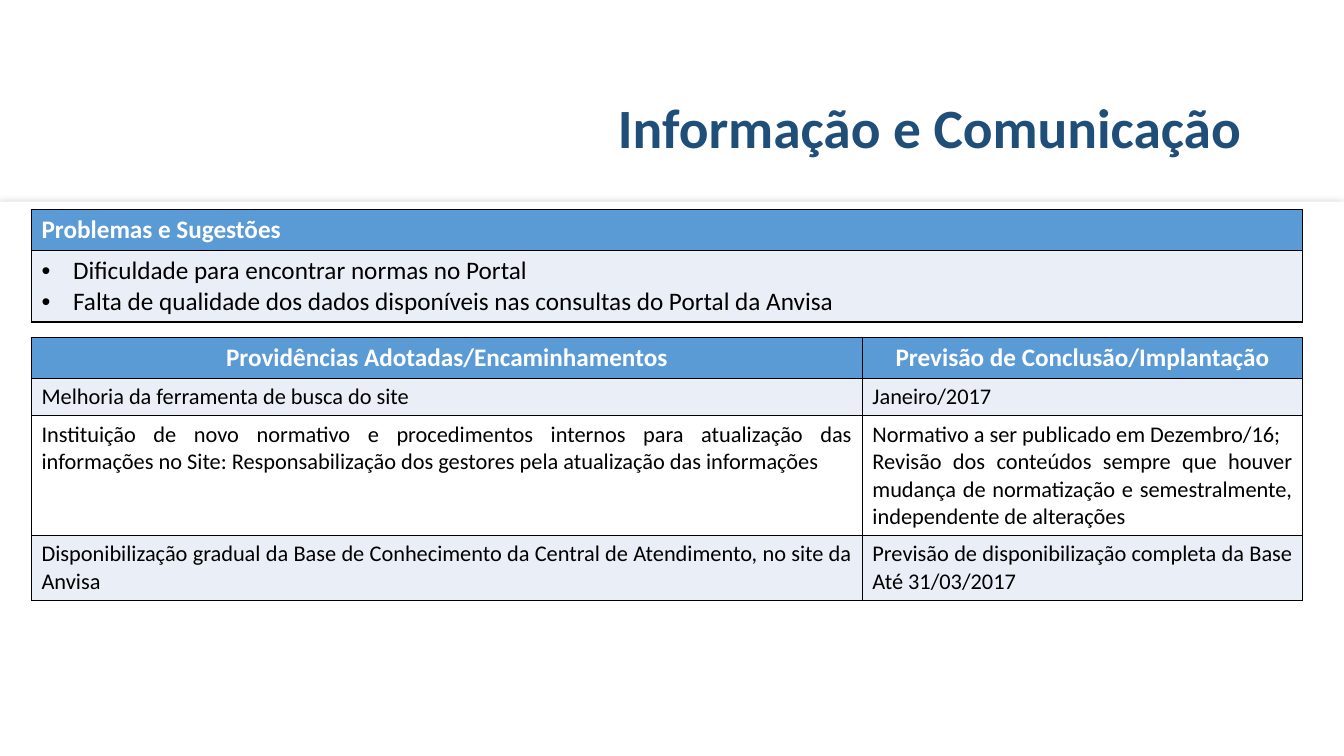
from lxml import etree
from pptx import Presentation
from pptx.dml.color import RGBColor
from pptx.enum.shapes import MSO_SHAPE
from pptx.enum.text import MSO_ANCHOR, PP_ALIGN
from pptx.oxml.ns import qn
from pptx.util import Pt

LEFT, CENTER, RIGHT, JUSTIFY = PP_ALIGN.LEFT, PP_ALIGN.CENTER, PP_ALIGN.RIGHT, PP_ALIGN.JUSTIFY
MIDDLE = MSO_ANCHOR.MIDDLE
RECTANGLE = MSO_SHAPE.RECTANGLE
TITLE_ONLY = 5

COLORS = {
    "title": "1F4E79",
    "header": "5B9BD5",
    "band": "EAEFF7",
    "white": "FFFFFF",
    "black": "000000",
    "shadow": "A6A6A6",
}


def rgb(name):
    return RGBColor.from_string(COLORS[name])


def add_color(parent, name):
    return etree.SubElement(parent, qn("a:srgbClr"), val=COLORS[name])


class SlideBuilder:
    font = "Calibri"

    def __init__(self, slide):
        self.slide = slide

    def format_paragraph(self, paragraph, size, color, bold, align):
        paragraph.alignment = align
        for run in paragraph.runs:
            run.font.name = self.font
            run.font.size = Pt(size)
            run.font.bold = bold
            run.font.color.rgb = rgb(color)

    def title(self, text, left, top, width, height):
        title = self.slide.shapes.title
        title.left, title.top, title.width, title.height = map(Pt, (left, top, width, height))
        frame = title.text_frame
        frame.text = text
        frame.word_wrap = True
        frame.vertical_anchor = MIDDLE
        frame.paragraphs[0].line_spacing = 0.9
        self.format_paragraph(frame.paragraphs[0], 39.6, "title", True, RIGHT)

    def panel(self, left, top, width, height):
        """Add the white content area with a soft shadow along its edge."""
        panel = self.slide.shapes.add_shape(RECTANGLE, *map(Pt, (left, top, width, height)))
        panel.fill.solid()
        panel.fill.fore_color.rgb = rgb("white")
        panel.line.fill.background()
        effects = etree.SubElement(panel._element.spPr, qn("a:effectLst"))
        shadow = etree.SubElement(effects, qn("a:outerShdw"), blurRad=str(Pt(5)), dist="0", dir="0")
        etree.SubElement(add_color(shadow, "shadow"), qn("a:alpha"), val="42000")

    def cell_borders(self, cell):
        properties = cell._tc.get_or_add_tcPr()
        for index, side in enumerate(("lnL", "lnR", "lnT", "lnB")):
            line = etree.Element(qn(f"a:{side}"), w=str(Pt(1)))
            add_color(etree.SubElement(line, qn("a:solidFill")), "black")
            properties.insert(index, line)

    def bullet(self, paragraph):
        properties = paragraph._p.get_or_add_pPr()
        properties.set("marL", str(Pt(22.5)))
        properties.set("indent", str(Pt(-22.5)))
        etree.SubElement(properties, qn("a:buFont"), typeface="Arial")
        etree.SubElement(properties, qn("a:buChar"), char="•")

    def table(self, rows, left, top, widths, heights, header_align, body_align, body_size,
              bulleted=False):
        """Add a table with a blue header row and alternating body bands."""
        frame = self.slide.shapes.add_table(
            len(rows), len(widths), *map(Pt, (left, top, sum(widths), sum(heights))))
        table = frame.table
        for column, width in zip(table.columns, widths):
            column.width = Pt(width)
        for row_index, (texts, height) in enumerate(zip(rows, heights)):
            table.rows[row_index].height = Pt(height)
            is_header = row_index == 0
            body_fill = "band" if row_index % 2 else "white"
            for cell, text in zip(table.rows[row_index].cells, texts):
                cell.fill.solid()
                cell.fill.fore_color.rgb = rgb("header" if is_header else body_fill)
                self.cell_borders(cell)
                cell.text_frame.text = text
                for paragraph in cell.text_frame.paragraphs:
                    if is_header:
                        self.format_paragraph(paragraph, 18, "white", True, header_align)
                        continue
                    if bulleted:
                        self.bullet(paragraph)
                    self.format_paragraph(paragraph, body_size, "black", False, body_align)


PROBLEMS = [
    ["Problemas e Sugestões"],
    ["Dificuldade para encontrar normas no Portal\n"
     "Falta de qualidade dos dados disponíveis nas consultas do Portal da Anvisa"],
]
ACTIONS = [
    ["Providências Adotadas/Encaminhamentos", "Previsão de Conclusão/Implantação"],
    ["Melhoria da ferramenta de busca do site", "Janeiro/2017"],
    ["Instituição de novo normativo e procedimentos internos para atualização das informações "
     "no Site: Responsabilização dos gestores pela atualização das informações",
     "Normativo a ser publicado em Dezembro/16;\n"
     "Revisão dos conteúdos sempre que houver mudança de normatização e semestralmente, "
     "independente de alterações"],
    ["Disponibilização gradual da Base de Conhecimento da Central de Atendimento, no site da Anvisa",
     "Previsão de disponibilização completa da Base Até 31/03/2017"],
]


def main():
    presentation = Presentation()
    presentation.slide_width, presentation.slide_height = Pt(960), Pt(540)
    slide = presentation.slides.add_slide(presentation.slide_layouts[TITLE_ONLY])
    builder = SlideBuilder(slide)
    builder.panel(0, 144, 960, 396)
    builder.title("Informação e Comunicação", 66, 46, 828, 95)
    builder.table(PROBLEMS, 22.5, 149.5, [908], [29.3, 51], LEFT, LEFT, 18, bulleted=True)
    builder.table(ACTIONS, 22.5, 241, [593.5, 314.5], [29.3, 26.7, 85.5, 46.3],
                  CENTER, JUSTIFY, 16)
    presentation.save("out.pptx")


if __name__ == "__main__":
    main()
